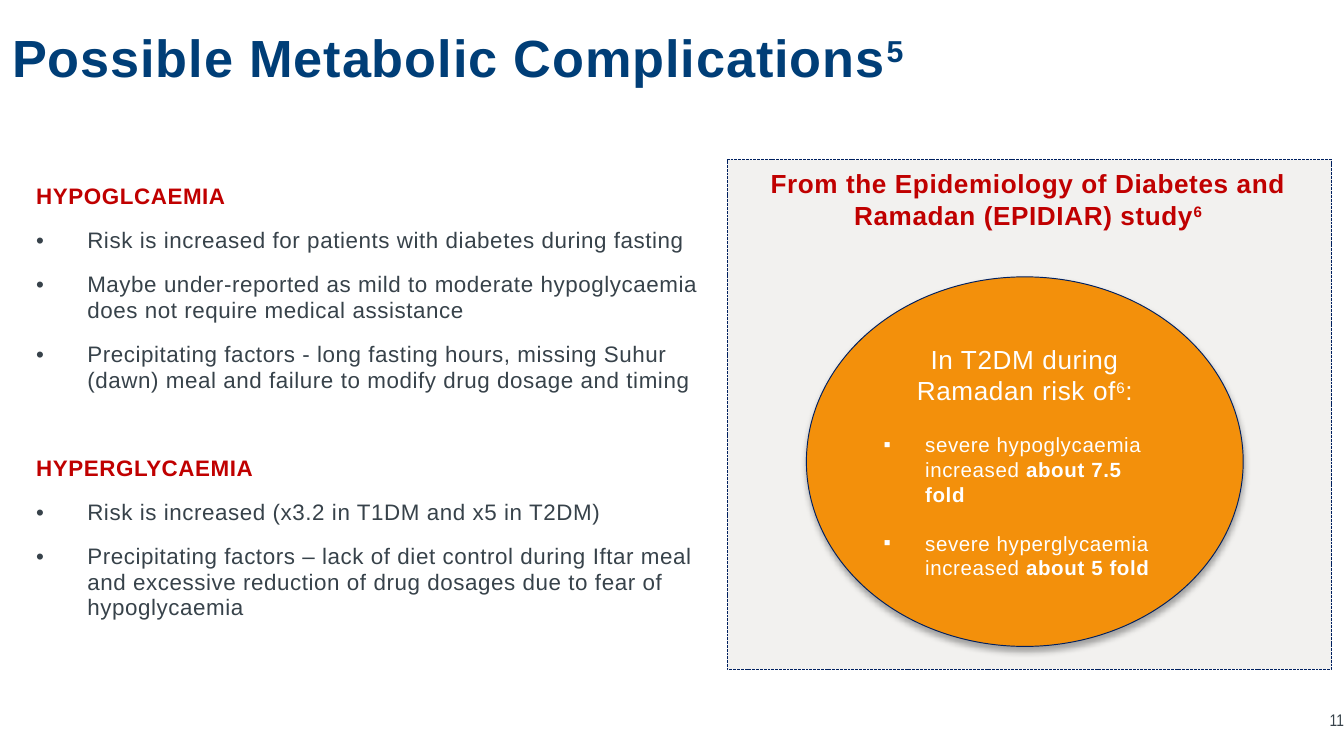
from lxml.etree import SubElement
from pptx import Presentation
from pptx.dml.color import RGBColor
from pptx.enum.dml import MSO_LINE
from pptx.enum.shapes import MSO_SHAPE
from pptx.enum.text import MSO_ANCHOR, PP_ALIGN
from pptx.oxml.ns import qn
from pptx.util import Inches, Pt

NAVY = RGBColor(0x00, 0x3E, 0x77)
EDGE = RGBColor(0x00, 0x20, 0x60)
RED = RGBColor(0xC0, 0x00, 0x00)
SLATE = RGBColor(0x37, 0x42, 0x4A)
GREY = RGBColor(0xF2, 0xF1, 0xEF)
AMBER = RGBColor(0xF3, 0x90, 0x0B)
WHITE = RGBColor(0xFF, 0xFF, 0xFF)

# Content: a run is (text, marks), with b for bold and ^ for superscript
TITLE = [("Possible Metabolic Complications", "b"), ("5", "b^")]
TOPICS = [
    ("HYPOGLCAEMIA", [
        "Risk is increased for patients with diabetes during fasting",
        "Maybe under-reported as mild to moderate hypoglycaemia does not "
        "require medical assistance",
        "Precipitating factors - long fasting hours, missing Suhur (dawn) "
        "meal and failure to modify drug dosage and timing",
    ]),
    ("HYPERGLYCAEMIA", [
        "Risk is increased (x3.2 in T1DM and x5 in T2DM)",
        "Precipitating factors – lack of diet control during Iftar meal and "
        "excessive reduction of drug dosages due to fear of hypoglycaemia",
    ]),
]
STUDY = [("From the Epidemiology of Diabetes and Ramadan (EPIDIAR) study", "b"),
         ("6", "b^")]
LEAD = [("In T2DM during Ramadan risk of", ""), ("6", "^"), (":", "")]
RISKS = [
    [("severe hypoglycaemia increased ", ""), ("about 7.5 fold", "b")],
    [("severe hyperglycaemia increased ", ""), ("about 5 fold", "b")],
]
PAGE = "11"

# Places: left, top, width, height in inches
HEAD = (0.09, -0.03, 8.99, 0.95)
BODY = (0.27, 1.37, 5, 3.43)
PANEL = (5.41, 1.19, 4.5, 3.79)
LABEL = (5.4, 1.2, 4.5, 0.57)
OVAL = (6, 2.06, 3.25, 2.75)
FOOT = (9.69, 5.28, 0.31, 0.24)

# Slide in 16:9
deck = Presentation()
deck.slide_width = Inches(10)
deck.slide_height = deck.slide_width * 9 // 16
slide = deck.slides.add_slide(deck.slide_layouts[6])


def add_box(place, inset=True):
    frame = slide.shapes.add_textbox(*map(Inches, place)).text_frame
    frame.word_wrap = True
    if not inset:
        frame.margin_left = frame.margin_right = 0
        frame.margin_top = frame.margin_bottom = 0
    return frame


def add_form(kind, place, fill):
    form = slide.shapes.add_shape(kind, *map(Inches, place))
    form.fill.solid()
    form.fill.fore_color.rgb = fill
    form.line.color.rgb = EDGE
    form.line.width = Pt(0.5)
    form.shadow.inherit = False
    return form


def add_para(frame, runs, size, color, align=PP_ALIGN.LEFT, lines=1.0, gap=0,
             mark=None, indent=0, font="Arial", track=0.3):
    first = frame.paragraphs[0]
    para = frame.add_paragraph() if first.runs else first
    para.alignment, para.line_spacing = align, lines
    para.space_before = Pt(gap)
    if mark:
        props = para._p.get_or_add_pPr()
        props.set("marL", str(Inches(indent)))
        props.set("indent", str(-Inches(indent)))
        SubElement(props, qn("a:buFont"), typeface="Arial")
        SubElement(props, qn("a:buChar"), char=mark)
    for text, marks in runs:
        run = para.add_run()
        run.text = text
        run.font.name, run.font.size = font, Pt(size)
        run.font.color.rgb = color
        run.font.bold = "b" in marks
        props = run._r.get_or_add_rPr()
        props.set("spc", str(round(track * 100)))
        if "^" in marks:
            props.set("baseline", "30000")


def add_shadow(form):
    effects = form._element.spPr.find(qn("a:effectLst"))
    shade = SubElement(effects, qn("a:outerShdw"), blurRad=str(Pt(3.5)),
                       dist=str(Pt(2.2)), dir="5400000", rotWithShape="0")
    color = SubElement(shade, qn("a:srgbClr"), val="000000")
    SubElement(color, qn("a:alpha"), val="32000")


# Grey panel
panel = add_form(MSO_SHAPE.RECTANGLE, PANEL, GREY)
panel.line.dash_style = MSO_LINE.SQUARE_DOT

# Title
head = add_box(HEAD, inset=False)
head.vertical_anchor = MSO_ANCHOR.MIDDLE
add_para(head, TITLE, 28, NAVY, lines=0.95, track=0.5)

# Topics, with a wider gap above each later one
body = add_box(BODY, inset=False)
for spot, (topic, points) in enumerate(TOPICS):
    add_para(body, [(topic, "b")], 12, RED, lines=0.95,
             gap=33.5 if spot else 10)
    for point in points:
        add_para(body, [(point, "")], 12, SLATE, lines=0.95, gap=10,
                 mark="•", indent=0.38)

# Page number
add_para(add_box(FOOT, inset=False), [(PAGE, "")], 9, SLATE,
         align=PP_ALIGN.RIGHT, font="Arial Narrow", track=0.1)

# Oval with the risks
oval = add_form(MSO_SHAPE.OVAL, OVAL, AMBER)
add_shadow(oval)
frame = oval.text_frame
frame.word_wrap = True
frame.vertical_anchor = MSO_ANCHOR.MIDDLE
add_para(frame, LEAD, 14, WHITE, align=PP_ALIGN.CENTER)
for risk, gap in zip(RISKS, (14, 13)):
    add_para(frame, risk, 11, WHITE, gap=gap, mark="▪", indent=0.31)

# Study label
add_para(add_box(LABEL), STUDY, 14, RED, align=PP_ALIGN.CENTER)

deck.save("out.pptx")
